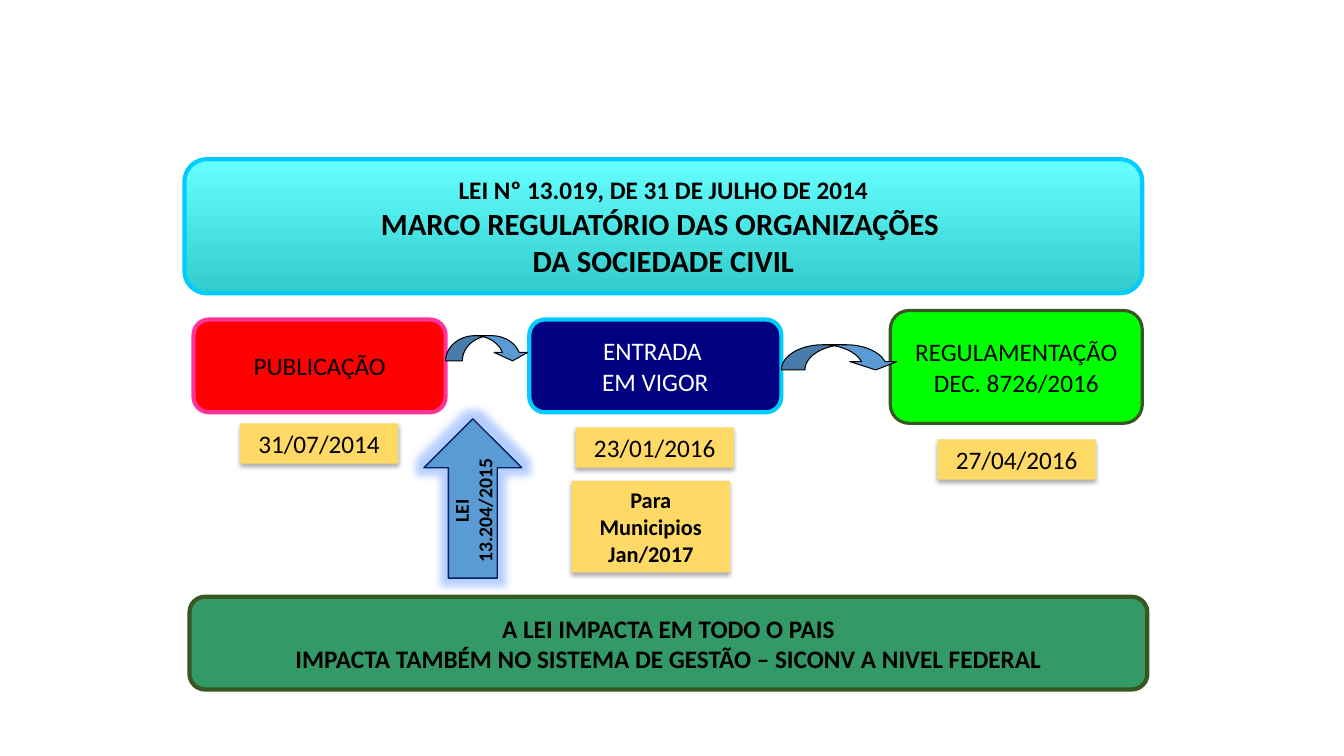
from lxml.etree import SubElement
from pptx import Presentation
from pptx.dml.color import RGBColor
from pptx.enum.shapes import MSO_SHAPE
from pptx.enum.text import MSO_ANCHOR, PP_ALIGN
from pptx.oxml.ns import qn
from pptx.util import Inches, Pt


def paint(color_format, color):
    color_format.rgb = RGBColor.from_string(color)


def add_box(preset, place, fill, line=None, width=0, lines=(), size=18, bold=False,
            color="000000", wrap=False, effect=None):
    box = page.shapes.add_shape(preset, *[Inches(length) for length in place])
    box.shadow.inherit = False
    box.fill.solid()
    paint(box.fill.fore_color, fill)
    if line:
        paint(box.line.color, line)
        box.line.width = Pt(width)
    else:
        box.line.fill.background()
    frame = box.text_frame
    frame.word_wrap = wrap
    frame.vertical_anchor = MSO_ANCHOR.MIDDLE
    for index, text in enumerate(lines):
        para = frame.paragraphs[0] if index == 0 else frame.add_paragraph()
        para.text = text
        para.alignment = PP_ALIGN.CENTER
        para.font.name = "Calibri"
        para.font.size = Pt(size)
        para.font.bold = bold
        paint(para.font.color, color)
    if effect:
        tag, settings, effect_color, alpha = effect
        effects = box._element.spPr.find(qn("a:effectLst"))
        node = SubElement(effects, qn(tag), settings)
        tint = SubElement(node, qn("a:srgbClr"), val=effect_color)
        SubElement(tint, qn("a:alpha"), val=str(alpha * 1000))
    return box


deck = Presentation()
deck.slide_width = Inches(13.33)
deck.slide_height = Inches(7.5)
page = deck.slides.add_slide(deck.slide_layouts[6])

ROUNDED = MSO_SHAPE.ROUNDED_RECTANGLE
stages = [
    ((1.92, 3.17, 2.5, 0.92), "FF0000", "FF3399", 3, ["PUBLICAÇÃO"], "000000"),
    ((5.25, 3.17, 2.5, 0.92), "000080", "00CCFF", 3, ["ENTRADA ", "EM VIGOR"], "FFFFFF"),
    ((8.83, 3.08, 2.5, 1.12), "00FF00", "385723", 2.25,
     ["REGULAMENTAÇÃO", "DEC. 8726/2016"], "000000"),
]
for place, fill, line, width, lines, color in stages:
    add_box(ROUNDED, place, fill, line, width, lines, color=color)

add_box(ROUNDED, (1.88, 5.92, 9.5, 0.92), "339966", "385723", 3,
        ["A LEI IMPACTA EM TODO O PAIS",
         "IMPACTA TAMBÉM NO SISTEMA DE GESTÃO – SICONV A NIVEL FEDERAL"], bold=True)

title = add_box(ROUNDED, (1.83, 1.58, 9.5, 1.33), "66FFFF", "00CCFF", 3,
                ["LEI Nº 13.019, DE 31 DE JULHO DE 2014",
                 "MARCO REGULATÓRIO DAS ORGANIZAÇÕES ", "DA SOCIEDADE CIVIL"],
                size=22, bold=True)
title.text_frame.paragraphs[0].font.size = Pt(18)
title.fill.gradient()
title.fill.gradient_angle = 270
for stop, color, position in zip(title.fill.gradient_stops, ("66FFFF", "33CCCC"), (0, 1)):
    paint(stop.color, color)
    stop.position = position

for left, top, width in ((4.42, 3.33, 0.83), (7.75, 3.42, 1.17)):
    curve = add_box(MSO_SHAPE.CURVED_DOWN_ARROW, (left, top, width, 0.25),
                    "5B9BD5", "000000", 0.75)
    curve.adjustments[0] = width / 0.25 / 5
    curve.adjustments[1] = width / 0.25 / 2.5
    curve.adjustments[2] = 0.333

glow = ("a:glow", {"rad": str(Inches(0.15))}, "4A86FF", 40)
law_arrow = add_box(MSO_SHAPE.RIGHT_ARROW, (3.9, 4.46, 1.58, 0.97), "5B9BD5", "002060", 1,
                    ["LEI 13.204/2015"], size=14, bold=True, wrap=True, effect=glow)
law_arrow.rotation = 270

shadow = ("a:outerShdw", {"blurRad": str(Pt(3.5)), "dist": str(Pt(2.2)), "dir": "5400000",
                          "algn": "t", "rotWithShape": "0"}, "000000", 32)
notes = [
    (2.38, 4.2, 0.4, ["31/07/2014"], 18, False),
    (5.71, 4.24, 0.4, ["23/01/2016"], 18, False),
    (9.3, 4.36, 0.4, ["27/04/2016"], 18, False),
    (5.67, 4.77, 0.91, ["Para Municipios", "Jan/2017"], 16, True),
]
for left, top, height, lines, size, bold in notes:
    add_box(MSO_SHAPE.RECTANGLE, (left, top, 1.57, height), "FFD966", lines=lines,
            size=size, bold=bold, wrap=True, effect=shadow)

deck.save("out.pptx")
